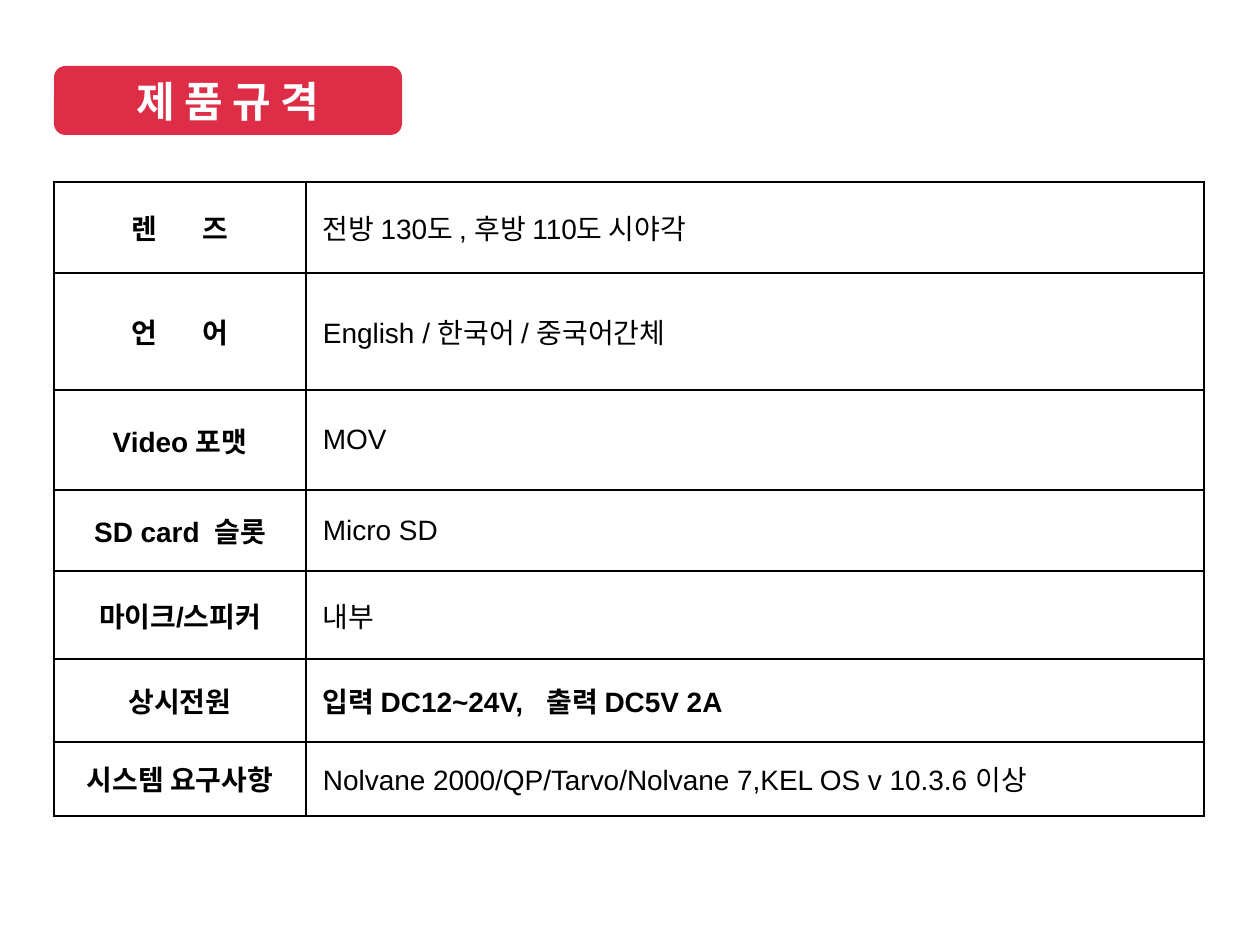
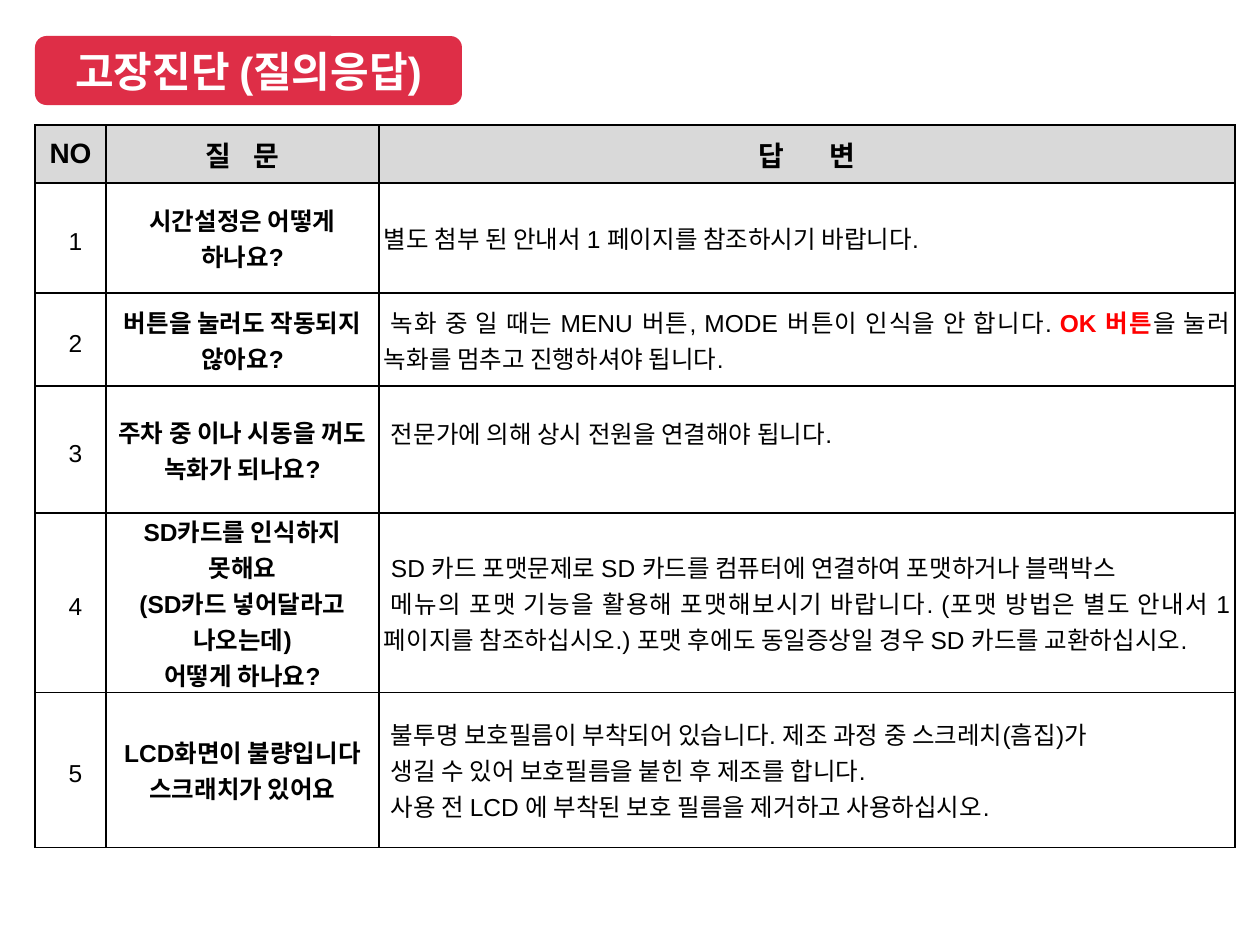
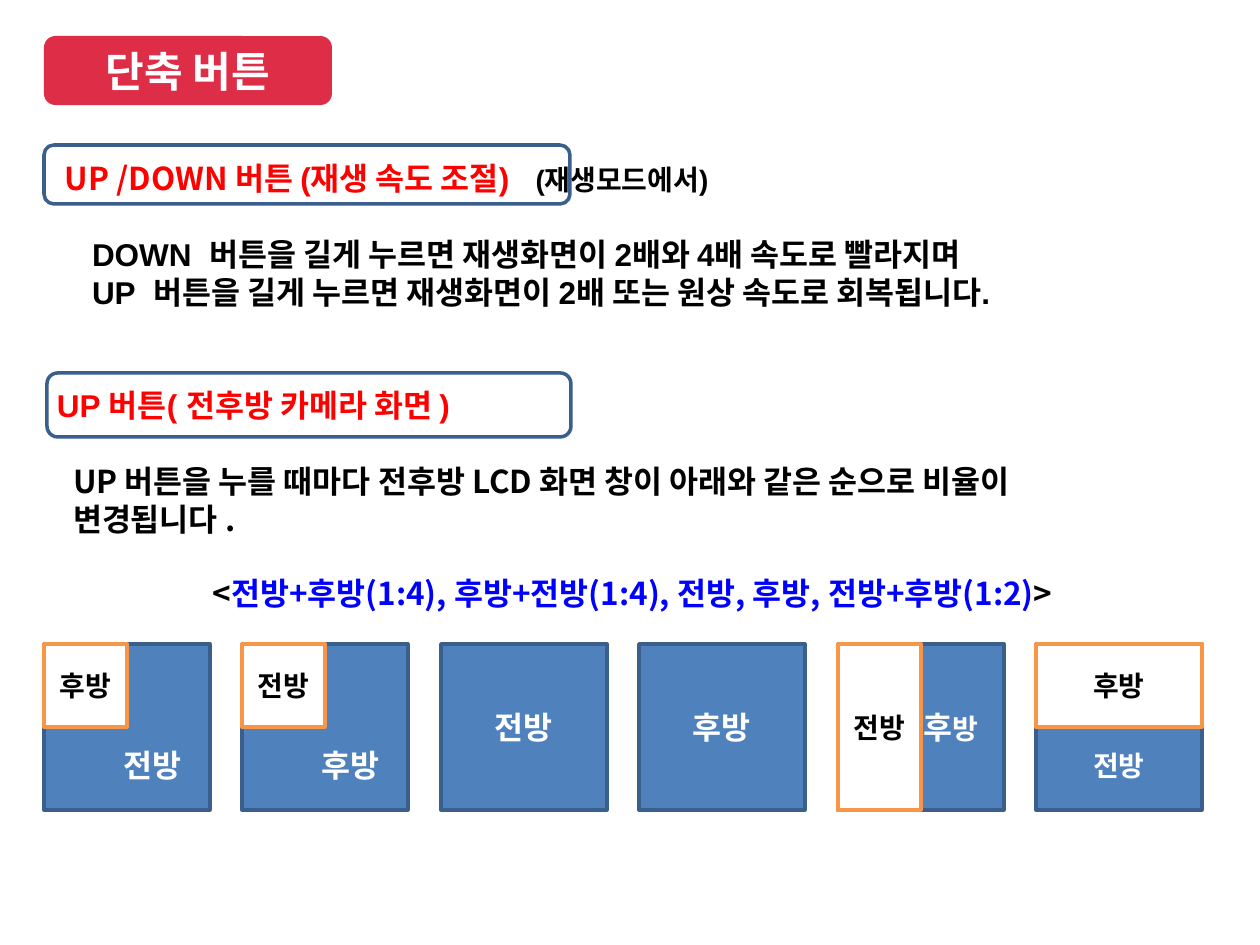
from lxml.etree import SubElement
from pptx import Presentation
from pptx.dml.color import RGBColor
from pptx.enum.shapes import MSO_SHAPE
from pptx.enum.text import MSO_ANCHOR, PP_ALIGN
from pptx.oxml.ns import qn
from pptx.util import Emu, Pt

EMU_PER_INCH, PX_PER_INCH = 914400, 126
COLORS = {
    "title": "DE2E47", "white": "FFFFFF", "black": "000000", "header": "D9D9D9",
    "red": "FF0000", "blue": "0000FF", "tile": "4F81BD", "outline": "3A5F8C",
    "orange": "F79646",
}
LATIN, KOREAN = "Arial", "Noto Sans CJK KR"
CENTER, LEFT, JUSTIFY = PP_ALIGN.CENTER, PP_ALIGN.LEFT, PP_ALIGN.JUSTIFY


def gap(points):
    """One space widened by the given points."""
    return " ", {"spacing": points}


# ---- Content: a paragraph is a string, a list of spans, or a dict with options
SPEC_ROW_HEIGHTS = [91, 117, 100, 81, 88, 83, 74]
SPEC_COLUMNS = [252, 898]
SPEC_ROWS = [
    (["렌", gap(22), "즈"], "전방 130도 , 후방 110도 시야각"),
    (["언", gap(22), "어"], "English / 한국어 / 중국어간체"),
    ("Video 포맷", "MOV"),
    (["SD card", gap(4), "슬롯"], "Micro SD"),
    ("마이크/스피커", "내부"),
    ("상시전원", {"spans": ["입력 DC12~24V,", gap(9), "출력 DC5V 2A"], "bold": True}),
    ("시스템 요구사항", "Nolvane 2000/QP/Tarvo/Nolvane 7,KEL OS v 10.3.6 이상"),
]

FAQ_ROW_HEIGHTS = [58, 110, 93, 127, 179, 155]
FAQ_COLUMNS = [71, 273, 856]
FAQ_HEADER = ["NO", ["질", gap(9), "문"], ["답", gap(22), "변"]]
FAQ_BLANK_BELOW = {3: 34}  # question number: empty room under its answer
FAQ_ROWS = [
    (["시간설정은 어떻게", "하나요?"],
     ["별도 첨부 된 안내서 1 페이지를 참조하시기 바랍니다."]),
    (["버튼을 눌러도 작동되지", "않아요?"],
     [{"spans": ["녹화 중 일 때는 MENU 버튼, MODE 버튼이 인식을 안 합니다. ",
                 ("OK 버튼", {"color": "red", "bold": True}),
                 "을 눌러 녹화를 멈추고 진행하셔야 됩니다."], "first": 7}]),
    (["주차 중 이나 시동을 꺼도 녹화가 되나요?"],
     [{"spans": ["전문가에 의해 상시 전원을 연결해야 됩니다."], "first": 7}]),
    (["SD카드를 인식하지", "못해요", "(SD카드 넣어달라고 나오는데)", "어떻게 하나요?"],
     [{"spans": ["SD 카드 포맷문제로 SD 카드를 컴퓨터에 연결하여 포맷하거나 블랙박스"],
       "first": 7},
      {"spans": ["메뉴의 포맷 기능을 활용해 포맷해보시기 바랍니다. (포맷 방법은 별도 안내서 "
                 "1 페이지를 참조하십시오.) 포맷 후에도 동일증상일 경우 SD 카드를 교환하십시오."],
       "first": 7}]),
    (["LCD화면이 불량입니다", "스크래치가 있어요"],
     [{"spans": [line], "first": 7} for line in (
         "불투명 보호필름이 부착되어 있습니다. 제조 과정 중 스크레치(흠집)가",
         "생길 수 있어 보호필름을 붙힌 후 제조를 합니다.",
         "사용 전 LCD 에 부착된 보호 필름을 제거하고 사용하십시오.")]),
]

BUTTON_TEXT = [
    {"spans": [("UP /DOWN ", {"font": KOREAN, "color": "red"}),
               ("버튼 (재생 속도 조절)", {"color": "red"}), gap(10),
               ("(재생모드에서)", {"size": 16})], "left": 8},
    {"spans": ["DOWN", gap(5), "버튼을 길게 누르면 재생화면이 2배와 4배 속도로 빨라지며"],
     "left": 35, "before": 38},
    {"spans": ["UP", gap(5), "버튼을 길게 누르면 재생화면이 2배 또는 원상 속도로 회복됩니다."],
     "left": 35},
    {"spans": ["UP 버튼( 전후방 카메라 화면 )"], "color": "red", "before": 75},
    {"spans": ["UP 버튼을 누를 때마다 전후방 LCD 화면 창이 아래와 같은 순으로 비율이"],
     "font": KOREAN, "left": 16, "before": 38},
    {"spans": ["변경됩니다 ."], "font": KOREAN, "left": 16},
    {"spans": ["<", ("전방+후방(1:4), 후방+전방(1:4), 전방, 후방, 전방+후방(1:2)",
                     {"color": "blue"}), ">"],
     "font": KOREAN, "align": CENTER, "before": 36},
]
HEADING_FRAMES = [(44, 145, 526, 59), (47, 373, 524, 64)]

TILE_SIZE, TILE_LEFT, TILE_TOP, TILE_PITCH = 166, 44, 644, 198.4
HALF = TILE_SIZE // 2
# label, label size, label offset (left, top), window text and size
TILES = [
    ("전방", 18, (52, 76), ("후방", HALF, HALF)),
    ("후방", 18, (52, 76), ("전방", HALF, HALF)),
    ("전방", 18, (0, 0), None),
    ("후방", 18, (0, 0), None),
    (["후", ("방", {"size": 16})], 18, (60, 0), ("전방", HALF, TILE_SIZE)),
    ("전방", 16, (0, 76), ("후방", TILE_SIZE, HALF)),
]


# ---- Helpers
def px(value):
    return Emu(round(value * EMU_PER_INCH / PX_PER_INCH))


def rgb(name):
    return RGBColor.from_string(COLORS[name])


def set_font(font, size=None, color=None, bold=None, font_name=None):
    if size:
        font.size = Pt(size)
    if color:
        font.color.rgb = rgb(color)
    if bold is not None:
        font.bold = bold
    if font_name:
        font.name = font_name


def write(frame, paragraphs, margins=(0, 0, 0, 0), **style):
    """Fill a text frame; options of a paragraph override the shared style."""
    frame.word_wrap = True
    frame.vertical_anchor = style.pop("anchor", MSO_ANCHOR.MIDDLE)
    (frame.margin_left, frame.margin_top,
     frame.margin_right, frame.margin_bottom) = map(px, margins)
    write_paragraphs(frame, paragraphs, **style)


def write_paragraphs(frame, paragraphs, **style):
    for index, content in enumerate(paragraphs):
        para = frame.paragraphs[0] if index == 0 else frame.add_paragraph()
        if isinstance(content, str):
            content = [content]
        if isinstance(content, list):
            content = {"spans": content}
        look = {**style, **content}
        para.alignment = look.get("align", LEFT)
        if look.get("line"):
            para.line_spacing = Pt(look["line"])
        if look.get("before"):
            para.space_before = px(look["before"])
        properties = para._p.get_or_add_pPr()
        properties.set("marL", str(px(look.get("left", 0))))
        properties.set("indent", str(px(look.get("first", 0))))
        set_font(para.font, look["size"], look.get("color", "black"),
                 look.get("bold", False), look.get("font", LATIN))
        SubElement(properties.find(qn("a:defRPr")), qn("a:ea"), typeface=KOREAN)
        for item in look["spans"]:
            text, change = (item, {}) if isinstance(item, str) else item
            span = para.add_run()
            span.text = text
            set_font(span.font, change.get("size"), change.get("color"),
                     change.get("bold"), change.get("font"))
            if "spacing" in change:
                span._r.get_or_add_rPr().set("spc", str(change["spacing"] * 100))


def add_box(shapes, kind, area, fill=None, line=None):
    box = shapes.add_shape(kind, *map(px, area))
    box.shadow.inherit = False
    if fill:
        box.fill.solid()
        box.fill.fore_color.rgb = rgb(fill)
    else:
        box.fill.background()
    if line:
        box.line.color.rgb = rgb(line)
        box.line.width = Pt(2)
    else:
        box.line.fill.background()
    return box


def add_page(deck, title, area):
    page = deck.slides.add_slide(deck.slide_layouts[6])
    box = add_box(page.shapes, MSO_SHAPE.ROUNDED_RECTANGLE, area, "title")
    write(box.text_frame, [title], size=24, color="white", bold=True, align=CENTER)
    return page


def add_grid(page, left, top, columns, rows):
    table = page.shapes.add_table(len(rows), len(columns), px(left), px(top),
                                  px(sum(columns)), px(sum(rows))).table
    table.first_row = table.horz_banding = False
    for column, width in zip(table.columns, columns):
        column.width = px(width)
    for row, height in zip(table.rows, rows):
        row.height = px(height)
    return table


def fill_cell(cell, paragraphs, side=5, left=None, below=0, fill=None, **style):
    cell.vertical_anchor = MSO_ANCHOR.MIDDLE
    cell.margin_left = px(side if left is None else left)
    cell.margin_right = px(side)
    cell.margin_top, cell.margin_bottom = 0, px(below)
    properties = cell._tc.get_or_add_tcPr()
    for edge in ("a:lnL", "a:lnR", "a:lnT", "a:lnB"):
        border = SubElement(properties, qn(edge), w=str(Pt(1)))
        paint = SubElement(border, qn("a:solidFill"))
        SubElement(paint, qn("a:srgbClr"), val=COLORS["black"])
    if fill:
        cell.fill.solid()
        cell.fill.fore_color.rgb = rgb(fill)
    else:
        cell.fill.background()
    write_paragraphs(cell.text_frame, paragraphs, **style)


# ---- Slides
def add_specifications(deck):
    page = add_page(deck, "제 품 규 격", (54, 66, 348, 69))
    table = add_grid(page, 54, 182, SPEC_COLUMNS, SPEC_ROW_HEIGHTS)
    for row, (label, value) in enumerate(SPEC_ROWS):
        fill_cell(table.cell(row, 0), [label], side=9, size=16, bold=True, align=CENTER)
        fill_cell(table.cell(row, 1), [value], side=9, left=17, size=16)


def add_questions(deck):
    page = add_page(deck, "고장진단 (질의응답)", (35, 36, 427, 69))
    table = add_grid(page, 35, 125, FAQ_COLUMNS, FAQ_ROW_HEIGHTS)
    for column, label in enumerate(FAQ_HEADER):
        fill_cell(table.cell(0, column), [label], fill="header",
                  size=16, bold=True, align=CENTER)
    body = {"size": 14, "line": 20.5}
    for number, (question, answer) in enumerate(FAQ_ROWS, 1):
        fill_cell(table.cell(number, 0), [str(number)], first=10, align=CENTER, **body)
        fill_cell(table.cell(number, 1), question, bold=True, align=CENTER, **body)
        fill_cell(table.cell(number, 2), answer, align=JUSTIFY,
                  below=FAQ_BLANK_BELOW.get(number, 0), **body)


def add_shortcuts(deck):
    page = add_page(deck, "단축 버튼", (44, 36, 288, 69))
    text = page.shapes.add_textbox(*map(px, (44, 110, 1177, 509)))
    write(text.text_frame, BUTTON_TEXT, margins=(13, 49, 13, 6), anchor=MSO_ANCHOR.TOP,
          size=18, bold=True, line=21.7)
    for area in HEADING_FRAMES:
        add_box(page.shapes, MSO_SHAPE.ROUNDED_RECTANGLE, area, line="outline")

    # Screen layouts, each with an optional window over the main view
    for index, (label, size, offset, window) in enumerate(TILES):
        left = round(TILE_LEFT + index * TILE_PITCH)
        shapes = page.shapes.add_group_shape().shapes if window else page.shapes
        tile = add_box(shapes, MSO_SHAPE.RECTANGLE,
                       (left, TILE_TOP, TILE_SIZE, TILE_SIZE), "tile", "outline")
        write(tile.text_frame, [label], margins=(*offset, 0, 0), size=size,
              color="white", bold=True, font=KOREAN, align=CENTER)
        if window:
            name, width, height = window
            pane = add_box(shapes, MSO_SHAPE.RECTANGLE,
                           (left, TILE_TOP, width, height), "white", "orange")
            write(pane.text_frame, [name], size=16, bold=True, font=KOREAN, align=CENTER)


def main():
    deck = Presentation()
    deck.slide_width, deck.slide_height = px(1260), px(945)
    add_specifications(deck)
    add_questions(deck)
    add_shortcuts(deck)
    deck.save("out.pptx")


if __name__ == "__main__":
    main()
